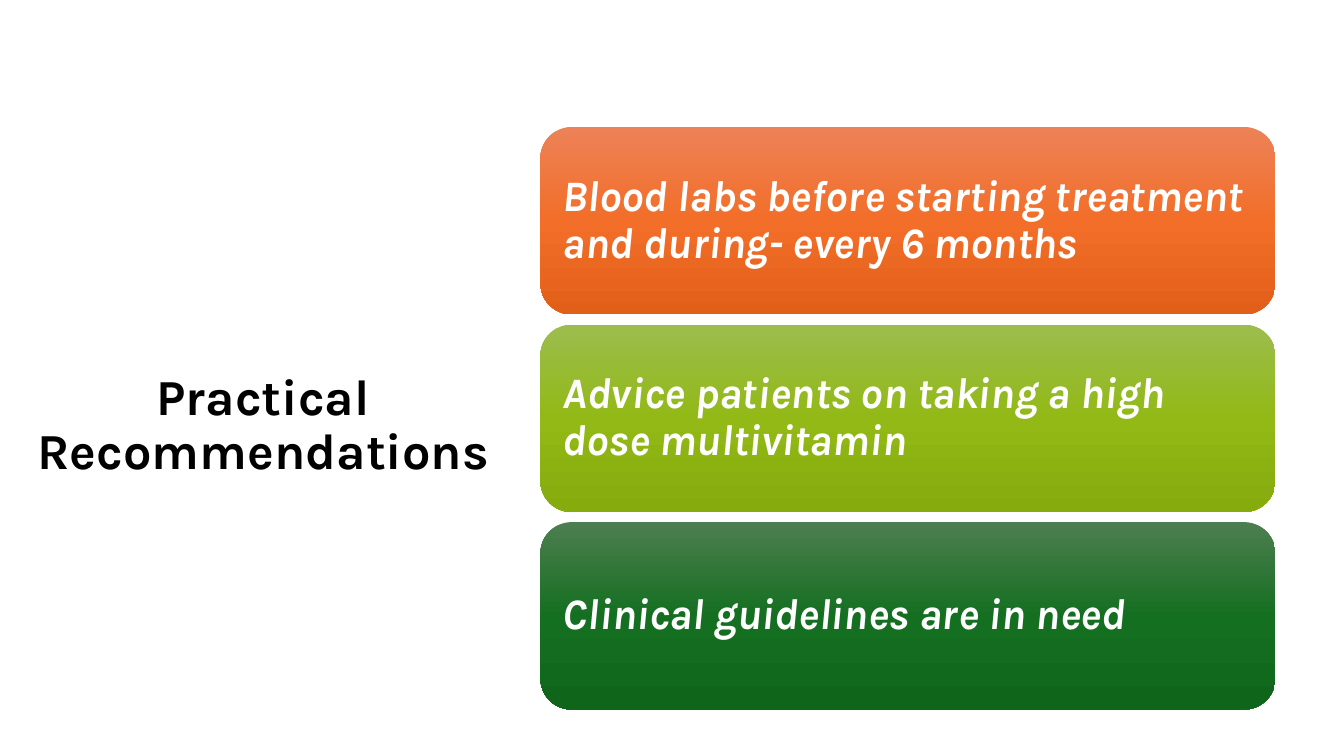
"""Build the practical recommendations slide: a heading beside three gradient cards."""
from copy import deepcopy

from pptx import Presentation
from pptx.dml.color import RGBColor
from pptx.enum import shapes, text
from pptx.util import Inches, Pt

HEADING = "Practical Recommendations"
RECOMMENDATIONS = [
    ("Blood labs before starting treatment and during- every 6 months",
     ("ED8257", "F26E29", "E25F1A")),
    ("Advice patients on taking a high dose multivitamin",
     ("9CBD4E", "92B916", "85AB0D")),
    ("Clinical guidelines are in need",
     ("4D7E50", "156F21", "0F661B")),
]
THEME = {
    "heading": {"name": "Karla", "size": Pt(36), "bold": True, "color": "000000"},
    "card": {"name": "Karla", "size": Pt(31), "bold": True, "italic": True,
             "color": "FFFFFF"},
    "line_spacing": 0.9,
}
SLIDE_SIZE = (13.33, 7.5)
HEADING_BOX = (0, 1.39, 5.05, 4.72)
HEADING_INSETS = {"left": 0.27, "top": 0.1, "right": 0.1, "bottom": 1.7}
CARD_LEFT, CARD_TOP, CARD_WIDTH, CARD_HEIGHT, CARD_GAP = 5.36, 1.26, 7.29, 1.86, 0.1
CARD_INSETS = dict.fromkeys(("left", "top", "right", "bottom"), 0.13)


def write(holder, wording, style, insets, anchor, alignment):
    frame = holder.text_frame
    frame.word_wrap = True
    frame.vertical_anchor = anchor
    for side, inset in insets.items():
        setattr(frame, f"margin_{side}", Inches(inset))
    paragraph = frame.paragraphs[0]
    paragraph.alignment = alignment
    paragraph.line_spacing = THEME["line_spacing"]
    run = paragraph.add_run()
    run.text = wording
    for attribute, value in style.items():
        if attribute == "color":
            run.font.color.rgb = RGBColor.from_string(value)
        else:
            setattr(run.font, attribute, value)
    return paragraph


def shade(card, colours):
    card.fill.gradient()
    card.fill.gradient_angle = 270
    stop_list = card.fill._fill._gradFill.gsLst
    stop_list.insert(1, deepcopy(stop_list[0]))
    for index, (stop, colour) in enumerate(zip(card.fill.gradient_stops, colours)):
        stop.position = index / (len(colours) - 1)
        stop.color.rgb = RGBColor.from_string(colour)


def main():
    deck = Presentation()
    deck.slide_width, deck.slide_height = map(Inches, SLIDE_SIZE)
    slide = deck.slides.add_slide(deck.slide_layouts[6])

    for row, (advice, colours) in enumerate(RECOMMENDATIONS):
        top = CARD_TOP + row * (CARD_HEIGHT + CARD_GAP)
        card = slide.shapes.add_shape(
            shapes.MSO_SHAPE.ROUNDED_RECTANGLE,
            *map(Inches, (CARD_LEFT, top, CARD_WIDTH, CARD_HEIGHT)))
        card.shadow.inherit = False
        card.line.fill.background()
        shade(card, colours)
        paragraph = write(card, advice, THEME["card"], CARD_INSETS,
                          text.MSO_ANCHOR.MIDDLE, text.PP_ALIGN.LEFT)
        paragraph._p.get_or_add_pPr().set("rtl", "1")

    heading = slide.shapes.add_textbox(*map(Inches, HEADING_BOX))
    write(heading, HEADING, THEME["heading"], HEADING_INSETS,
          text.MSO_ANCHOR.BOTTOM, text.PP_ALIGN.CENTER)
    deck.save("out.pptx")


if __name__ == "__main__":
    main()
